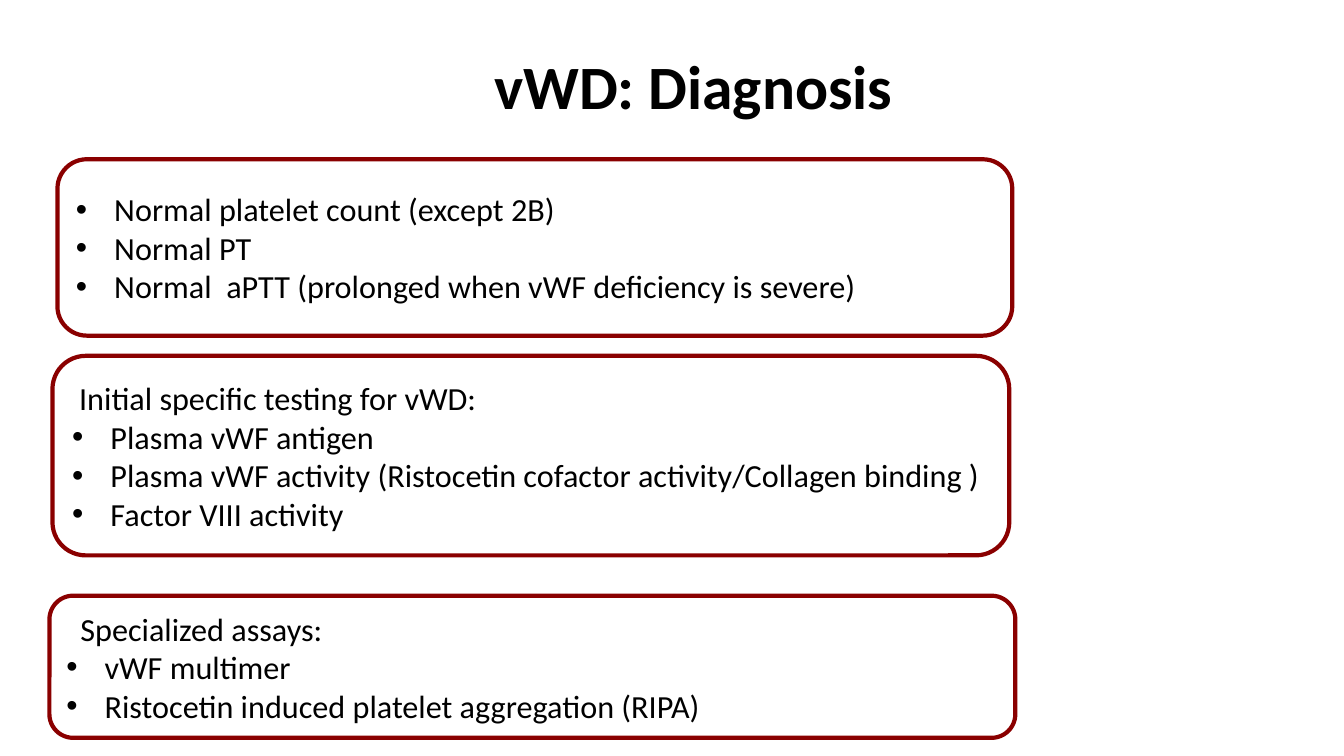
from lxml import etree
from pptx import Presentation
from pptx.dml.color import RGBColor
from pptx.enum.shapes import MSO_SHAPE
from pptx.enum.text import MSO_ANCHOR, MSO_AUTO_SIZE, PP_ALIGN
from pptx.oxml.ns import qn
from pptx.util import Inches, Pt

ROUNDED = MSO_SHAPE.ROUNDED_RECTANGLE
MIDDLE = MSO_ANCHOR.MIDDLE
NO_AUTOFIT = MSO_AUTO_SIZE.NONE
LEFT, CENTER = PP_ALIGN.LEFT, PP_ALIGN.CENTER

BLACK, DARK_RED = "000000", "8A0000"
TITLE_ONLY = 5
BULLET_INDENT = 0.38

FRAME_FORMAT = {
    "word_wrap": True,
    "auto_size": NO_AUTOFIT,
    "vertical_anchor": MIDDLE,
    "margin_left": Inches(0.1),
    "margin_right": Inches(0.1),
    "margin_top": Inches(0.05),
    "margin_bottom": Inches(0.05),
}
BODY_FONT = {"name": "Calibri", "size": Pt(23), "bold": False}
TITLE_FONT = {"name": "Calibri", "size": Pt(44), "bold": True}

# Each panel: left, top, width, height, heading, heading indent, bullets
PANELS = [
    (0.57, 1.58, 9.47, 1.75, None, 0, [
        "Normal platelet count (except 2B)",
        "Normal PT",
        "Normal  aPTT (prolonged when vWF deficiency is severe)",
    ]),
    (0.52, 3.53, 9.49, 1.98, "Initial specific testing for vWD:", 0.07, [
        "Plasma vWF antigen",
        "Plasma vWF activity (Ristocetin cofactor activity/Collagen binding )",
        "Factor VIII activity",
    ]),
    (0.49, 5.91, 9.58, 1.41, "Specialized assays:", 0.14, [
        "vWF multimer",
        "Ristocetin induced platelet aggregation (RIPA)",
    ]),
]


def color(hex_value):
    return RGBColor.from_string(hex_value)


def apply_format(target, values):
    for name, value in values.items():
        setattr(target, name, value)


def place(shape, left, top, width, height):
    apply_format(shape, {
        "left": Inches(left), "top": Inches(top),
        "width": Inches(width), "height": Inches(height),
    })


def write_line(para, text, font, align):
    para.alignment = align
    span = para.add_run()
    span.text = text
    apply_format(span.font, font)
    span.font.color.rgb = color(BLACK)


def set_indent(para, margin, bullet=False):
    props = para._p.get_or_add_pPr()
    props.set("marL", str(Inches(margin)))
    props.set("indent", str(-Inches(margin) if bullet else 0))
    if bullet:
        etree.SubElement(props, qn("a:buFont"), typeface="Arial")
        etree.SubElement(props, qn("a:buChar"), char="•")


def add_title(page, text):
    title = page.shapes.title
    place(title, 1.17, 0.39, 11.42, 1)
    apply_format(title.text_frame, FRAME_FORMAT)
    para = title.text_frame.paragraphs[0]
    write_line(para, text, TITLE_FONT, CENTER)
    para.line_spacing = 0.9


def add_panel(page, left, top, width, height, heading, heading_indent, bullets):
    box = page.shapes.add_shape(
        ROUNDED, Inches(left), Inches(top), Inches(width), Inches(height))
    box.shadow.inherit = False
    box.fill.background()
    box.line.color.rgb = color(DARK_RED)
    box.line.width = Pt(3)
    frame = box.text_frame
    apply_format(frame, FRAME_FORMAT)

    lines = [(text, BULLET_INDENT, True) for text in bullets]
    if heading:
        lines.insert(0, (heading, heading_indent, False))
    for index, (text, margin, bullet) in enumerate(lines):
        para = frame.add_paragraph() if index else frame.paragraphs[0]
        write_line(para, text, BODY_FONT, LEFT)
        set_indent(para, margin, bullet)


def main():
    deck = Presentation()
    deck.slide_width, deck.slide_height = Inches(13.33), Inches(7.5)
    page = deck.slides.add_slide(deck.slide_layouts[TITLE_ONLY])

    # Title
    add_title(page, "vWD: Diagnosis")

    # Outlined test panels
    for panel in PANELS:
        add_panel(page, *panel)

    deck.save("out.pptx")


if __name__ == "__main__":
    main()
